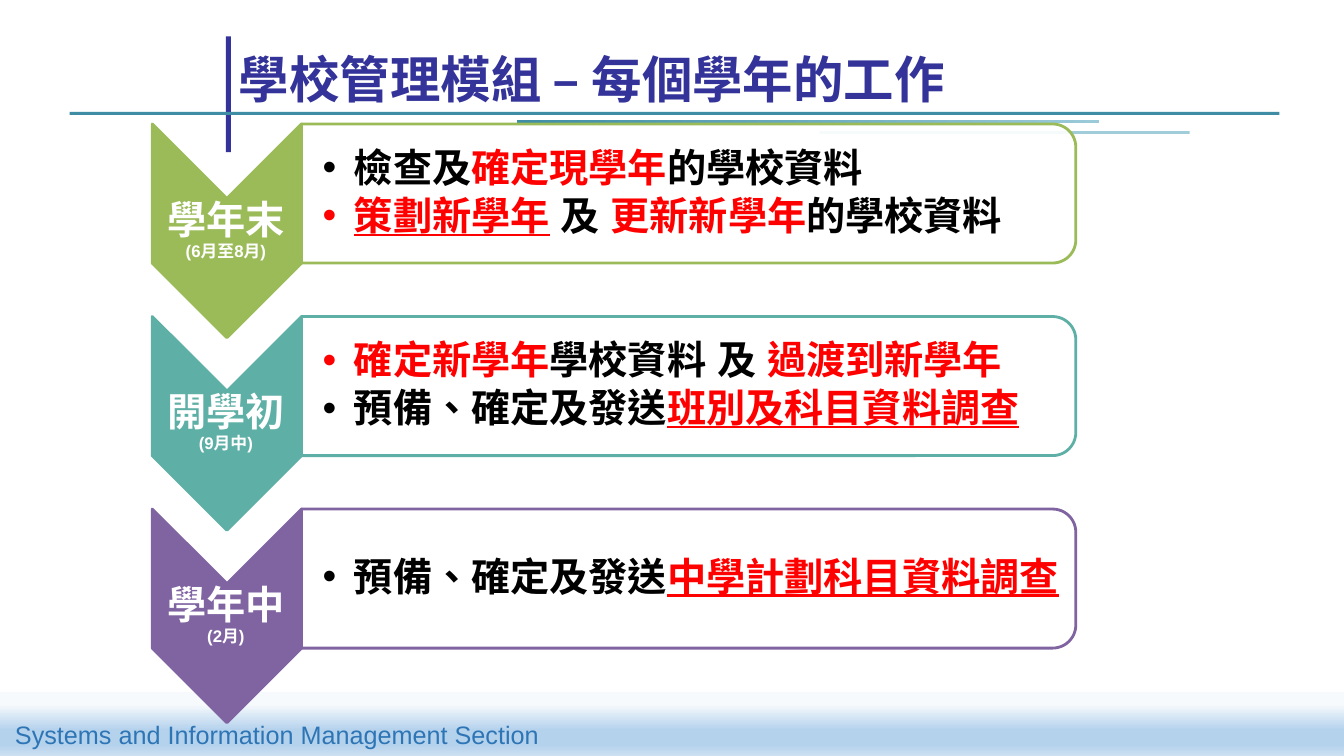
from dataclasses import dataclass
from typing import NamedTuple

from lxml.etree import SubElement
from pptx import Presentation
from pptx.dml.color import RGBColor
from pptx.enum.shapes import MSO_SHAPE as Shape
from pptx.enum.text import MSO_ANCHOR as Anchor, MSO_AUTO_SIZE as AutoSize, PP_ALIGN as Align
from pptx.oxml.ns import qn
from pptx.util import Inches, Pt


@dataclass(frozen=True)
class Theme:
    navy: str = "333399"
    teal: str = "3F8DA5"
    pale_teal: str = "A1CDDB"
    footer_blue: str = "2E75B6"
    white: str = "FFFFFF"
    black: str = "000000"
    red: str = "FF0000"
    title_size: float = 36
    list_size: float = 28
    footer_size: float = 18
    period_size: float = 12
    outline: float = 2
    sans: str = "Arial"
    label_font: str = "Lato"
    title_font: str = "Noto Sans CJK TC"


THEME = Theme()


class Box(NamedTuple):
    left: float
    top: float
    width: float
    height: float

    def down(self, distance: float) -> "Box":
        return self._replace(top=self.top + distance)


class Run(NamedTuple):
    text: str
    color: str = THEME.black
    size: float = THEME.list_size
    font: str = THEME.sans
    bold: bool = True
    underline: bool = False


class Band(NamedTuple):
    box: Box
    stops: list[tuple[int, str]]
    angle: int = 0


class Stage(NamedTuple):
    name: str
    period: str
    color: str
    tasks: list[list[Run]]


def key(text: str, underline: bool = False) -> Run:
    """A highlighted part of a task."""
    return Run(text, THEME.red, underline=underline)


BANDS = [
    Band(Box(0, 6.87, 13.33, 0.64),
         [(18, "F7FAFD"), (58, "B5D2EC"), (81, "B5D2EC"), (100, "CEE1F2")], 90),
    Band(Box(2.24, 0.36, 0.05, 1.15), [(0, THEME.navy)]),
    Band(Box(0.69, 1.11, 12, 0.03), [(0, THEME.teal)]),
    Band(Box(5.13, 1.19, 5.77, 0.03), [(0, THEME.teal), (100, "9BCAD9")]),
    Band(Box(8.13, 1.3, 3.67, 0.03), [(0, THEME.pale_teal)]),
]
STAGES = [
    Stage("學年末", "(6月至8月)", "9BBB59", [
        [Run("檢查及"), key("確定現學年"), Run("的學校資料")],
        [key("策劃新學年", True), Run(" 及 "), key("更新新學年"), Run("的學校資料")],
    ]),
    Stage("開學初", "(9月中)", "5EAFA6", [
        [key("確定新學年"), Run("學校資料 及 "), key("過渡到新學年")],
        [Run("預備、確定及發送"), key("班別及科目資料調查", True)],
    ]),
    Stage("學年中", "(2月)", "8064A2", [
        [Run("預備、確定及發送"), key("中學計劃科目資料調查", True)],
    ]),
]
STAGE_STEP = 1.91
CHEVRON = Box(1.19, 1.55, 2.12, 1.48)
LABEL = Box(1.5, 1.97, 1.48, 0.64)
PANEL = Box(6.14, -1.92, 1.38, 7.68)
TASKS = Box(2.98, 1.3, 7.62, 1.24)
TIGHT = {"margin_left": Inches(0.02), "margin_right": Inches(0.02),
         "margin_top": Inches(0.02), "margin_bottom": Inches(0.02),
         "vertical_anchor": Anchor.MIDDLE}


def apply(target, formats: dict) -> None:
    for name, value in formats.items():
        setattr(target, name, value)


def place(shape, box: Box) -> None:
    apply(shape, {name: Inches(value) for name, value in box._asdict().items()})


def write(frame, paragraphs: list[list[Run]], frame_format: dict,
          paragraph_format: dict, bulleted: bool = False) -> None:
    apply(frame, {"word_wrap": True, "auto_size": AutoSize.NONE} | frame_format)
    for index, runs in enumerate(paragraphs):
        paragraph = frame.add_paragraph() if index else frame.paragraphs[0]
        if bulleted:
            properties = paragraph._p.get_or_add_pPr()
            properties.set("marL", str(Inches(0.31)))
            properties.set("indent", str(-Inches(0.31)))
            SubElement(properties, qn("a:buChar")).set("char", "•")
        apply(paragraph, {"space_before": Pt(0)} | paragraph_format)
        for part in runs:
            add_run(paragraph, part)


def add_run(paragraph, part: Run) -> None:
    run = paragraph.add_run()
    run.text = part.text
    apply(run.font, {"name": part.font, "size": Pt(part.size),
                     "bold": part.bold, "underline": part.underline})
    run.font.color.rgb = RGBColor.from_string(part.color)
    properties = run._r.get_or_add_rPr()
    properties.set("lang", "zh-TW")
    SubElement(properties, qn("a:ea")).set("typeface", part.font)


def add_solid(slide, kind: Shape, box: Box, color: str):
    shape = slide.shapes.add_shape(kind, *map(Inches, box))
    shape.shadow.inherit = False
    shape.fill.solid()
    shape.fill.fore_color.rgb = RGBColor.from_string(color)
    shape.line.fill.background()
    return shape


def add_band(slide, band: Band) -> None:
    shape = add_solid(slide, Shape.RECTANGLE, band.box, band.stops[0][1])
    if len(band.stops) == 1:
        return
    shape.fill.gradient()
    shape.fill.gradient_angle = -band.angle % 360
    stop_list = next(shape.element.iter(qn("a:gsLst")))
    stop_list.clear()
    for position, color in band.stops:
        stop = SubElement(stop_list, qn("a:gs"))
        stop.set("pos", str(position * 1000))
        SubElement(stop, qn("a:srgbClr")).set("val", color)


def add_turned(slide, kind: Shape, box: Box, fill: str, outline: str):
    """Add an outlined shape rotated a quarter turn."""
    shape = add_solid(slide, kind, box, fill)
    shape.rotation = 90
    shape.line.color.rgb = RGBColor.from_string(outline)
    shape.line.width = Pt(THEME.outline)
    return shape


def add_text(slide, box: Box, paragraphs: list[list[Run]],
             frame_format: dict, paragraph_format: dict) -> None:
    textbox = slide.shapes.add_textbox(*map(Inches, box))
    write(textbox.text_frame, paragraphs, frame_format, paragraph_format)


def add_stage(slide, stage: Stage, task_list, offset: float) -> None:
    add_turned(slide, Shape.CHEVRON, CHEVRON.down(offset), stage.color, stage.color)
    label = [[Run(stage.name, THEME.white, font=THEME.label_font)],
             [Run(stage.period, THEME.white, THEME.period_size)]]
    add_text(slide, LABEL.down(offset), label, TIGHT,
             {"alignment": Align.CENTER, "line_spacing": 0.9})
    panel = add_turned(slide, Shape.ROUND_2_SAME_RECTANGLE, PANEL.down(offset),
                       THEME.white, stage.color)
    panel_color = next(panel.element.iter(qn("a:srgbClr")))
    SubElement(panel_color, qn("a:alpha")).set("val", "90000")
    slide.shapes.element.append(task_list.element)  # lift the list above its panel
    place(task_list, TASKS.down(offset))
    write(task_list.text_frame, stage.tasks, TIGHT | {"margin_left": Inches(0.22)},
          {"alignment": Align.LEFT, "line_spacing": 0.9, "space_after": Pt(4.2)}, True)


def main() -> None:
    deck = Presentation()
    apply(deck, {"slide_width": Inches(13.33), "slide_height": Inches(7.5)})
    slide = deck.slides.add_slide(deck.slide_layouts.get_by_name("Comparison"))
    title, *task_lists, spare = slide.placeholders
    spare.element.getparent().remove(spare.element)

    for band in BANDS:
        add_band(slide, band)
    add_text(slide, Box(0.05, 7.09, 5.45, 0.4),
             [[Run("Systems and Information Management Section", THEME.footer_blue,
                   THEME.footer_size, bold=False)]], {"word_wrap": False}, {})
    place(title, Box(2.27, 0.3, 10.44, 0.83))
    write(title.text_frame,
          [[Run("學校管理模組 – ", THEME.navy, THEME.title_size, THEME.title_font),
            Run("每個學年的工作", THEME.navy, THEME.title_size)]],
          {"vertical_anchor": Anchor.BOTTOM}, {"alignment": Align.LEFT})
    for index, (stage, task_list) in enumerate(zip(STAGES, task_lists)):
        add_stage(slide, stage, task_list, index * STAGE_STEP)
    deck.save("out.pptx")


if __name__ == "__main__":
    main()
